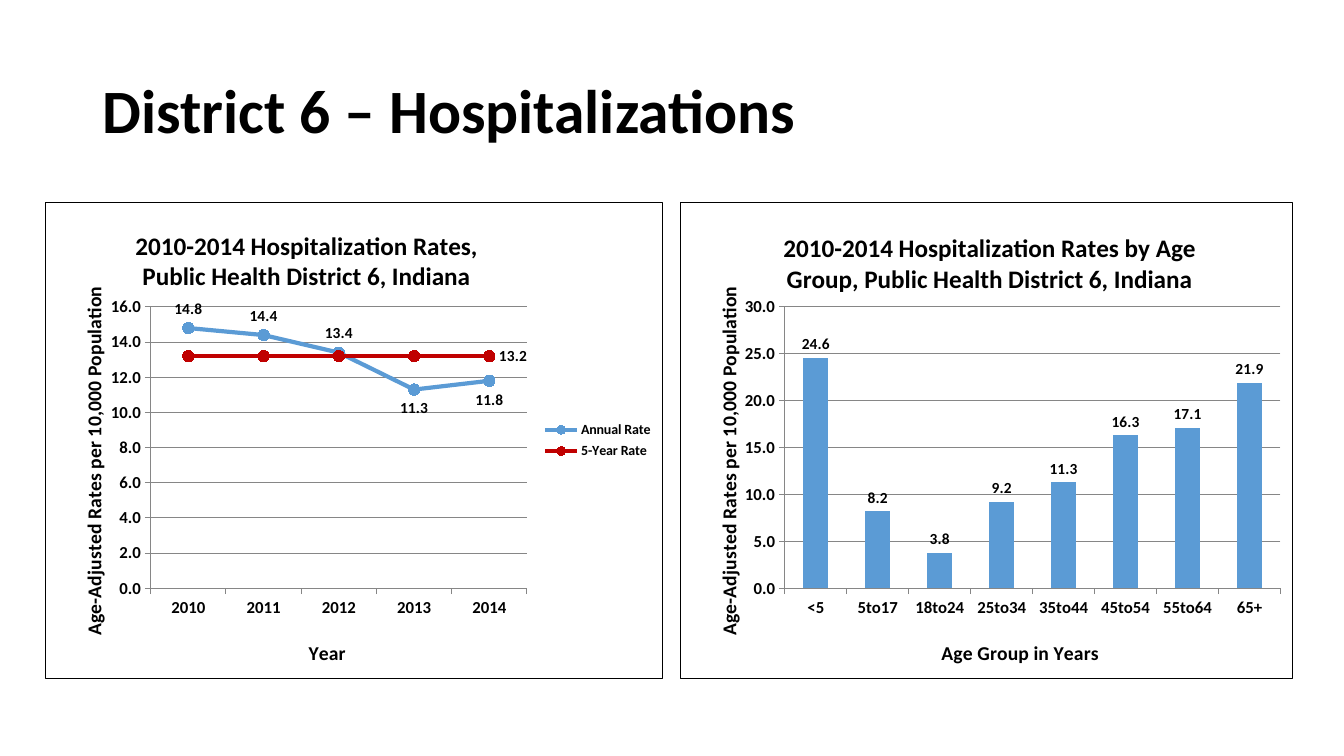
"""Build the District 6 hospitalization slide with its two rate charts."""
from dataclasses import dataclass, field

from lxml.etree import SubElement
from pptx import Presentation
from pptx.chart.axis import CategoryAxis, ValueAxis
from pptx.chart.chart import Chart
from pptx.chart.data import CategoryChartData
from pptx.dml.color import RGBColor
from pptx.enum.chart import XL_CHART_TYPE as ChartType
from pptx.enum.chart import XL_LABEL_POSITION as LabelPosition
from pptx.enum.chart import XL_LEGEND_POSITION as LegendPosition
from pptx.enum.chart import XL_MARKER_STYLE as MarkerStyle
from pptx.enum.chart import XL_TICK_MARK as TickMark
from pptx.enum.text import MSO_ANCHOR, MSO_AUTO_SIZE, PP_ALIGN
from pptx.oxml import parse_xml
from pptx.oxml.ns import nsdecls, qn
from pptx.slide import Slide
from pptx.text.text import Font
from pptx.util import Pt

COLORS = {"text": "000000", "blue": "5B9BD5", "red": "C00000", "grid": "868686"}
FONT = "Calibri"
RATE_TITLE = "Age-Adjusted Rates per 10,000 Population"


@dataclass
class RateSeries:
    """One series, with the label positions of single points."""

    name: str
    values: list[float]
    color: str
    label_position: LabelPosition | None = None
    point_labels: dict[int, LabelPosition] = field(default_factory=dict)


@dataclass
class ChartPanel:
    """One framed chart on the slide; lengths are points."""

    kind: ChartType
    left: float
    width: float
    title: str
    title_left: float
    category_title: str
    categories: list[str]
    series: list[RateSeries]
    plot_width: float


PANELS = [
    ChartPanel(
        ChartType.LINE_MARKERS, 32.4, 441.4,
        "2010-2014 Hospitalization Rates,\nPublic Health District 6, Indiana", 0.14,
        "Year", ["2010", "2011", "2012", "2013", "2014"],
        [
            RateSeries("Annual Rate", [14.8, 14.4, 13.4, 11.3, 11.8], "blue",
                       LabelPosition.ABOVE,
                       {3: LabelPosition.BELOW, 4: LabelPosition.BELOW}),
            RateSeries("5-Year Rate", [13.2] * 5, "red",
                       point_labels={4: LabelPosition.RIGHT}),
        ],
        0.61,
    ),
    ChartPanel(
        ChartType.COLUMN_CLUSTERED, 486, 437.8,
        "2010-2014 Hospitalization Rates by Age Group, Public Health District 6, Indiana", 0.16,
        "Age Group in Years",
        ["<5", "5to17", "18to24", "25to34", "35to44", "45to54", "55to64", "65+"],
        [RateSeries("Series 1", [24.6, 8.2, 3.8, 9.2, 11.3, 16.3, 17.1, 21.9], "blue",
                    LabelPosition.OUTSIDE_END)],
        0.81,
    ),
]


def color(name: str) -> RGBColor:
    """Return a named colour."""
    return RGBColor.from_string(COLORS[name])


def set_font(font: Font, size: float, bold: bool = True) -> None:
    """Apply the slide's typeface in black."""
    font.name, font.size, font.bold = FONT, Pt(size), bold
    font.color.rgb = color("text")


def place(chart: Chart, query: str, x: float, y: float,
          size: tuple[float, float] | None = None) -> None:
    """Position a chart part by fractions of the chart area."""
    part = chart.element.xpath(query)[0]
    for old_layout in part.findall(qn("c:layout")):
        part.remove(old_layout)
    is_plot = part.tag == qn("c:plotArea")
    layout = parse_xml(f"<c:layout {nsdecls('c')}><c:manualLayout/></c:layout>")
    settings = {"layoutTarget": "inner"} if is_plot else {}
    settings |= {"xMode": "edge", "yMode": "edge", "x": x, "y": y}
    if size:
        settings |= {"w": size[0], "h": size[1]}
    for name, value in settings.items():
        SubElement(layout[0], qn(f"c:{name}")).set("val", str(value))
    part.insert(0 if is_plot else 1, layout)


def add_border(chart: Chart) -> None:
    """Frame the chart area with a thin black line."""
    border = parse_xml(
        f"<c:spPr {nsdecls('c', 'a')}><a:noFill/><a:ln w=\"{Pt(0.75)}\"><a:solidFill>"
        f"<a:srgbClr val=\"{COLORS['text']}\"/></a:solidFill></a:ln></c:spPr>")
    chart.element.find(qn("c:chart")).addnext(border)


def style_axis(axis: CategoryAxis | ValueAxis, title: str) -> None:
    """Format an axis, its ticks and its title."""
    axis.major_tick_mark, axis.minor_tick_mark = TickMark.OUTSIDE, TickMark.NONE
    axis.format.line.color.rgb = color("grid")
    axis.format.line.width = Pt(0.75)
    set_font(axis.tick_labels.font, 12)
    axis.axis_title.text_frame.text = title
    set_font(axis.axis_title.text_frame.paragraphs[0].font, 14)


def style_series(chart: Chart, rates: list[RateSeries], is_line: bool) -> None:
    """Colour and label every series."""
    for series, rate in zip(chart.plots[0].series, rates):
        if is_line:
            series.smooth = False
            series.format.line.color.rgb = color(rate.color)
            series.format.line.width = Pt(3)
            series.marker.style, series.marker.size = MarkerStyle.CIRCLE, 8
            series.marker.format.fill.solid()
            series.marker.format.fill.fore_color.rgb = color(rate.color)
            series.marker.format.line.color.rgb = color(rate.color)
        else:
            series.format.fill.solid()
            series.format.fill.fore_color.rgb = color(rate.color)
        labels = series.data_labels
        labels.show_value = rate.label_position is not None
        set_font(labels.font, 11)
        if rate.label_position is not None:
            labels.position = rate.label_position
        for index, position in rate.point_labels.items():
            label = series.points[index].data_label
            set_font(label.font, 11)
            label.position = position


def add_panel(slide: Slide, panel: ChartPanel) -> None:
    """Add one chart to the slide."""
    data = CategoryChartData(number_format="0.0")
    data.categories = panel.categories
    for rate in panel.series:
        data.add_series(rate.name, rate.values)
    chart = slide.shapes.add_chart(panel.kind, Pt(panel.left), Pt(144), Pt(panel.width),
                                   Pt(341.3), data).chart
    set_font(chart.font, 10, False)
    add_border(chart)
    is_line = panel.kind == ChartType.LINE_MARKERS
    chart.plots[0].vary_by_categories = False
    if not is_line:
        chart.plots[0].gap_width = 150
    chart.chart_title.text_frame.text = panel.title
    for paragraph in chart.chart_title.text_frame.paragraphs:
        set_font(paragraph.font, 18)
    style_axis(chart.category_axis, panel.category_title)
    style_axis(chart.value_axis, RATE_TITLE)
    chart.value_axis.minimum_scale = 0
    chart.value_axis.maximum_scale = 16 if is_line else 30
    chart.value_axis.major_unit = 2 if is_line else 5
    chart.value_axis.tick_labels.number_format = "0.0"
    chart.value_axis.tick_labels.number_format_is_linked = False
    chart.value_axis.major_gridlines.format.line.color.rgb = color("grid")
    chart.value_axis.major_gridlines.format.line.width = Pt(0.75)
    style_series(chart, panel.series, is_line)
    place(chart, "./c:chart/c:title", panel.title_left, 0.05)
    place(chart, ".//c:plotArea", 0.17, 0.22, (panel.plot_width, 0.59))
    place(chart, ".//c:catAx/c:title", 0.42, 0.91)
    place(chart, ".//c:valAx/c:title", 0.05, 0.17)
    chart.has_legend = is_line
    if is_line:
        chart.legend.position = LegendPosition.RIGHT
        chart.legend.include_in_layout = False
        set_font(chart.legend.font, 10)
        place(chart, ".//c:legend", 0.8, 0.45, (0.19, 0.1))


def main() -> None:
    """Build and save the presentation."""
    presentation = Presentation()
    presentation.slide_width, presentation.slide_height = Pt(960), Pt(540)
    slide = presentation.slides.add_slide(presentation.slide_layouts[5])
    title = slide.shapes.title
    title.left, title.top, title.width, title.height = Pt(66), Pt(28.8), Pt(828), Pt(104.4)
    title.text_frame.text = "District 6 – Hospitalizations"
    title.text_frame.vertical_anchor = MSO_ANCHOR.MIDDLE
    title.text_frame.auto_size = MSO_AUTO_SIZE.NONE
    paragraph = title.text_frame.paragraphs[0]
    paragraph.alignment, paragraph.line_spacing = PP_ALIGN.LEFT, 0.9
    set_font(paragraph.font, 44)
    for panel in PANELS:
        add_panel(slide, panel)
    presentation.save("out.pptx")


if __name__ == "__main__":
    main()
